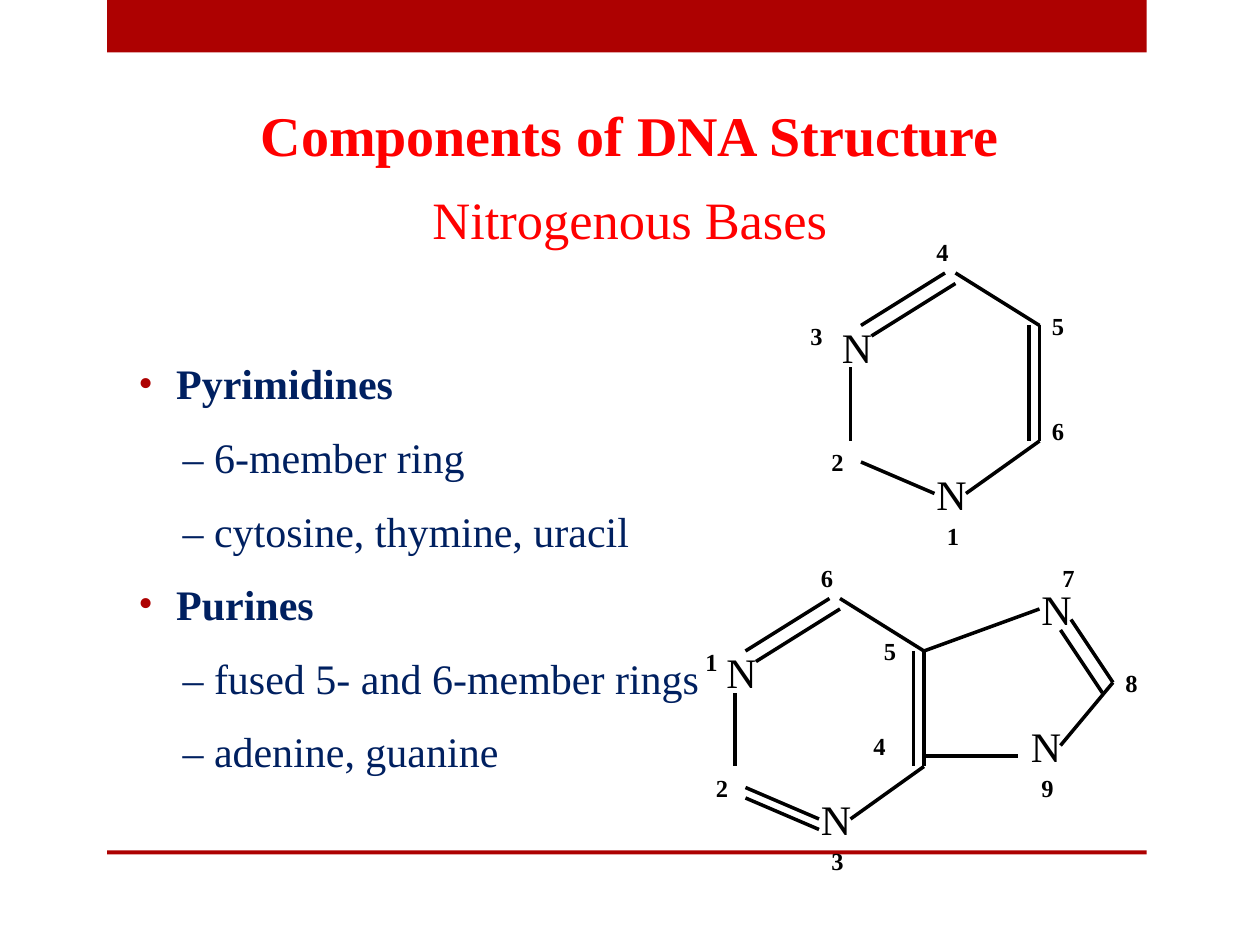
from dataclasses import dataclass
from typing import NamedTuple

import pptx
from lxml import etree
from pptx import slide as sl
from pptx import util as u
from pptx.dml import color
from pptx.enum import shapes, text
from pptx.oxml import ns


@dataclass(frozen=True)
class Theme:
    font: str = "Times New Roman"
    accent: str = "AD0101"
    title: str = "FF0000"
    body: str = "002060"
    ink: str = "000000"
    title_size: float = 32
    subtitle_size: float = 30
    body_size: float = 24
    atom_size: float = 24
    number_size: float = 14
    bond_width: float = 2


class Box(NamedTuple):
    left: float
    top: float
    width: float
    height: float


class Bond(NamedTuple):
    x1: float
    y1: float
    x2: float
    y2: float


class Label(NamedTuple):
    text: str
    left: float
    top: float


class Topic(NamedTuple):
    name: str
    details: tuple[str, ...]


THEME = Theme()

BARS = (Box(61.2, 0, 594, 30), Box(61.2, 486, 594, 2.2))

TOPICS = (
    Topic("Pyrimidines", ("– 6-member ring", "– cytosine, thymine, uracil")),
    Topic("Purines", ("– fused 5- and 6-member rings", "– adenine, guanine")),
)

RING_BONDS = (
    Bond(540, 156, 492, 186),
    Bond(546, 162, 498, 192),
    Bond(486, 210, 486, 252),
    Bond(492, 264, 534, 282),
    Bond(552, 282, 594, 252),
    Bond(588, 186, 588, 252),
    Bond(594, 186, 594, 252),
    Bond(546, 156, 594, 186),
)
RING_ATOMS = (Label("N", 474, 180), Label("N", 528, 264))
PURINE_SHIFT = (-66, 186)

PURINE_BONDS = (
    Bond(426, 456, 468, 474),
    Bond(528, 372, 594, 348),
    Bond(612, 354, 636, 390),
    Bond(606, 360, 630, 396),
    Bond(636, 390, 606, 426),
    Bond(528, 432, 582, 432),
)
PURINE_ATOMS = (Label("N", 588, 330), Label("N", 582, 408))

PYRIMIDINE_NUMBERS = (
    Label("1", 534, 294),
    Label("2", 468, 252),
    Label("3", 456, 180),
    Label("4", 528, 132),
    Label("5", 594, 174),
    Label("6", 594, 234),
)
PURINE_NUMBERS = (
    Label("1", 396, 366),
    Label("2", 402, 438),
    Label("3", 468, 480),
    Label("4", 492, 414),
    Label("5", 498, 360),
    Label("6", 462, 318),
    Label("7", 600, 318),
    Label("8", 636, 378),
    Label("9", 588, 438),
)


def add_run(paragraph, words: str, size: float, rgb: str, bold: bool = False) -> None:
    run = paragraph.add_run()
    run.text = words
    run.font.name = THEME.font
    run.font.size = u.Pt(size)
    run.font.bold = bold
    run.font.color.rgb = color.RGBColor.from_string(rgb)


def add_text_frame(slide: sl.Slide, box: Box, wrap: bool = True):
    frame = slide.shapes.add_textbox(*map(u.Pt, box)).text_frame
    frame.word_wrap = wrap
    return frame


def add_bar(slide: sl.Slide, box: Box) -> None:
    shape = slide.shapes.add_shape(shapes.MSO_SHAPE.RECTANGLE, *map(u.Pt, box))
    shape.shadow.inherit = False
    shape.fill.solid()
    shape.fill.fore_color.rgb = color.RGBColor.from_string(THEME.accent)
    shape.line.fill.background()


def add_bond(slide: sl.Slide, bond: Bond) -> None:
    line = slide.shapes.add_connector(shapes.MSO_CONNECTOR.STRAIGHT, *map(u.Pt, bond))
    line.line.width = u.Pt(THEME.bond_width)
    line.line.color.rgb = color.RGBColor.from_string(THEME.ink)
    etree.SubElement(line._element.spPr, ns.qn("a:effectLst"))


def add_atom(slide: sl.Slide, atom: Label) -> None:
    frame = add_text_frame(slide, Box(atom.left, atom.top, 31.7, 36), wrap=False)
    frame.auto_size = text.MSO_AUTO_SIZE.SHAPE_TO_FIT_TEXT
    add_run(frame.paragraphs[0], atom.text, THEME.atom_size, THEME.ink)


def add_number(slide: sl.Slide, number: Label) -> None:
    frame = add_text_frame(slide, Box(number.left, number.top, 21.6, 24), wrap=False)
    frame.auto_size = text.MSO_AUTO_SIZE.SHAPE_TO_FIT_TEXT
    add_run(frame.paragraphs[0], number.text, THEME.number_size, THEME.ink, bold=True)


def add_ring(slide: sl.Slide, dx: float = 0, dy: float = 0) -> None:
    for bond in RING_BONDS:
        add_bond(slide, Bond(bond.x1 + dx, bond.y1 + dy, bond.x2 + dx, bond.y2 + dy))
    for atom in RING_ATOMS:
        add_atom(slide, Label(atom.text, atom.left + dx, atom.top + dy))


def set_indent(paragraph, left: float, hanging: float) -> None:
    properties = paragraph._p.get_or_add_pPr()
    properties.set("marL", str(u.Pt(left)))
    properties.set("indent", str(-u.Pt(hanging)))


def add_bullet(paragraph) -> None:
    properties = paragraph._p.get_or_add_pPr()
    bullet_color = etree.SubElement(properties, ns.qn("a:buClr"))
    etree.SubElement(bullet_color, ns.qn("a:srgbClr"), val=THEME.accent)
    etree.SubElement(properties, ns.qn("a:buFont"), typeface=THEME.font)
    etree.SubElement(properties, ns.qn("a:buChar"), char="•")


def add_topics(slide: sl.Slide) -> None:
    frame = add_text_frame(slide, Box(72, 162, 336, 324))
    frame.vertical_anchor = text.MSO_ANCHOR.MIDDLE
    for index, topic in enumerate(TOPICS):
        paragraph = frame.add_paragraph() if index else frame.paragraphs[0]
        paragraph.space_before = u.Pt(13.2 if index else 0)
        set_indent(paragraph, 21.6, 21.6)
        add_bullet(paragraph)
        add_run(paragraph, topic.name, THEME.body_size, THEME.body, bold=True)
        for detail in topic.details:
            paragraph = frame.add_paragraph()
            paragraph.level = 1
            paragraph.space_before = u.Pt(13.2)
            set_indent(paragraph, 46.8, 21.6)
            add_run(paragraph, detail, THEME.body_size, THEME.body)


def add_title(slide: sl.Slide) -> None:
    frame = add_text_frame(slide, Box(72, 54, 576, 93.6))
    heading, subtitle = frame.paragraphs[0], frame.add_paragraph()
    heading.alignment = subtitle.alignment = text.PP_ALIGN.CENTER
    subtitle.space_before = u.Pt(11)
    add_run(heading, "Components of DNA Structure", THEME.title_size, THEME.title, bold=True)
    add_run(subtitle, "Nitrogenous Bases", THEME.subtitle_size, THEME.title)


def main() -> None:
    presentation = pptx.Presentation()
    presentation.slide_width, presentation.slide_height = u.Pt(720), u.Pt(540)
    slide = presentation.slides.add_slide(presentation.slide_layouts[6])
    for bar in BARS:
        add_bar(slide, bar)
    add_topics(slide)
    add_ring(slide)
    add_ring(slide, *PURINE_SHIFT)
    for bond in PURINE_BONDS:
        add_bond(slide, bond)
    for atom in PURINE_ATOMS:
        add_atom(slide, atom)
    for number in PYRIMIDINE_NUMBERS + PURINE_NUMBERS:
        add_number(slide, number)
    add_title(slide)
    presentation.save("out.pptx")


if __name__ == "__main__":
    main()
